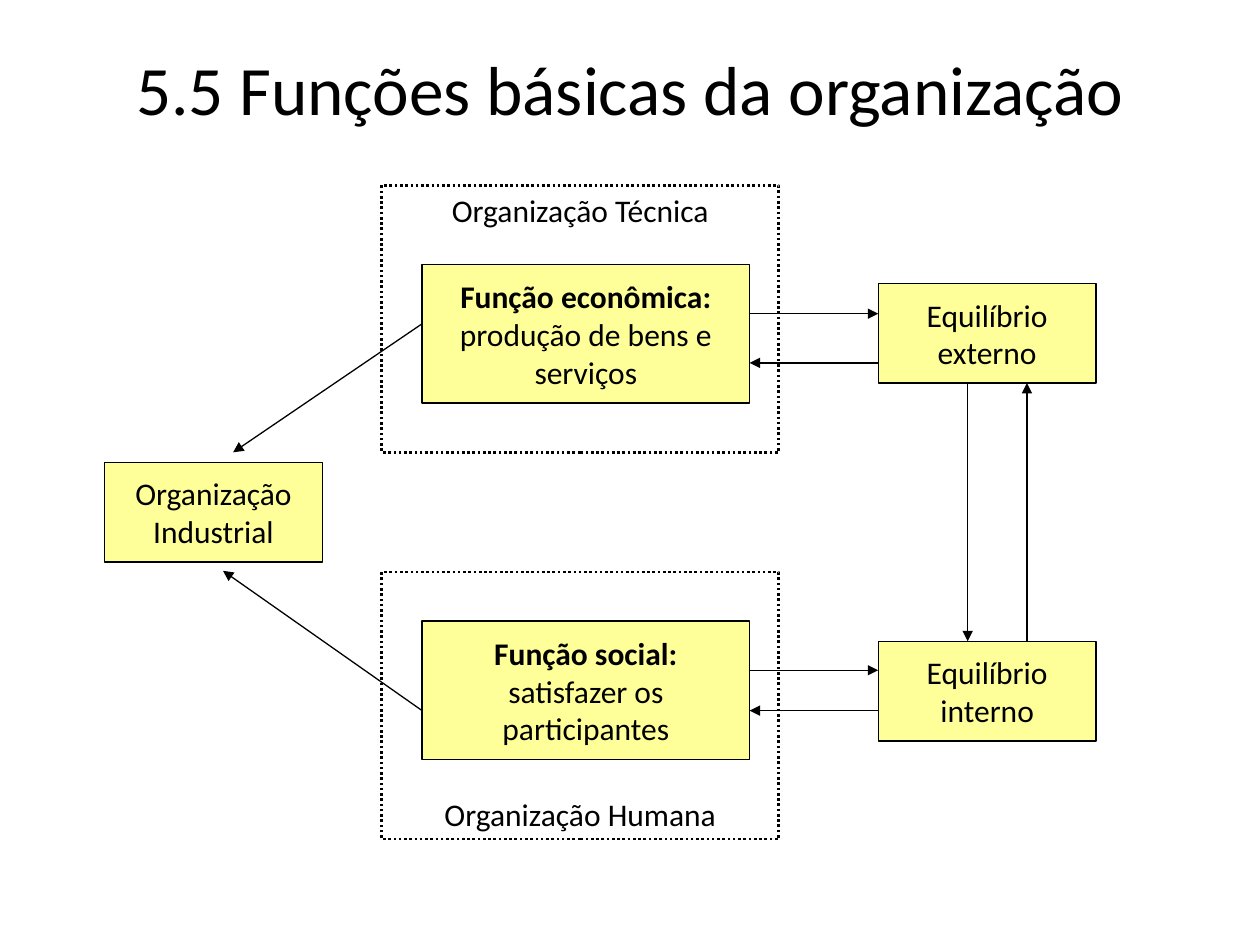
from dataclasses import dataclass

from lxml import etree
from pptx import Presentation
from pptx.dml.color import RGBColor
from pptx.enum.dml import MSO_LINE
from pptx.enum.shapes import MSO_CONNECTOR, MSO_SHAPE
from pptx.enum.text import MSO_ANCHOR, PP_ALIGN
from pptx.oxml.ns import qn
from pptx.util import Inches, Pt

RECTANGLE = MSO_SHAPE.RECTANGLE
STRAIGHT = MSO_CONNECTOR.STRAIGHT
DOTTED = MSO_LINE.ROUND_DOT
TOP, MIDDLE, BOTTOM = MSO_ANCHOR.TOP, MSO_ANCHOR.MIDDLE, MSO_ANCHOR.BOTTOM
CENTER = PP_ALIGN.CENTER


@dataclass(frozen=True)
class Theme:
    font: str = "Calibri"
    ink: RGBColor = RGBColor(0x00, 0x00, 0x00)
    box_fill: RGBColor = RGBColor(0xFF, 0xFF, 0x99)
    title_size: float = 39.6
    body_size: float = 18
    thin_line: float = 0.75
    frame_line: float = 1.5


@dataclass(frozen=True)
class Box:
    left: float
    top: float
    width: float
    height: float
    text: str
    heading: str = ""


@dataclass(frozen=True)
class Frame:
    top: float
    label: str
    anchor: MSO_ANCHOR


@dataclass(frozen=True)
class Arrow:
    start: tuple[float, float]
    end: tuple[float, float]


THEME = Theme()

FUNCTION_LEFT, FUNCTION_WIDTH, FUNCTION_HEIGHT = 3.35, 2.6, 1.1
BALANCE_LEFT = 6.97
SMALL_WIDTH, SMALL_HEIGHT = 1.73, 0.79
FRAME_LEFT, FRAME_WIDTH, FRAME_HEIGHT = 3.03, 3.15, 2.12
EXTERNAL_TOP, INTERNAL_TOP = 2.25, 5.09
FUNCTION_RIGHT = FUNCTION_LEFT + FUNCTION_WIDTH
EXTERNAL_BOTTOM = EXTERNAL_TOP + SMALL_HEIGHT

BOXES = [
    Box(0.83, 3.67, SMALL_WIDTH, SMALL_HEIGHT, "Organização Industrial"),
    Box(FUNCTION_LEFT, 2.1, FUNCTION_WIDTH, FUNCTION_HEIGHT,
        "produção de bens e serviços", "Função econômica: "),
    Box(FUNCTION_LEFT, 4.93, FUNCTION_WIDTH, FUNCTION_HEIGHT,
        "satisfazer os participantes", "Função social: "),
    Box(BALANCE_LEFT, EXTERNAL_TOP, SMALL_WIDTH, SMALL_HEIGHT, "Equilíbrio externo"),
    Box(BALANCE_LEFT, INTERNAL_TOP, SMALL_WIDTH, SMALL_HEIGHT, "Equilíbrio interno"),
]

ARROWS = [
    Arrow((FUNCTION_LEFT, 2.57), (1.85, 3.59)),
    Arrow((FUNCTION_LEFT, 5.64), (1.77, 4.53)),
    Arrow((FUNCTION_RIGHT, 2.49), (BALANCE_LEFT, 2.49)),
    Arrow((BALANCE_LEFT, 2.88), (FUNCTION_RIGHT, 2.88)),
    Arrow((FUNCTION_RIGHT, 5.32), (BALANCE_LEFT, 5.32)),
    Arrow((BALANCE_LEFT, 5.64), (FUNCTION_RIGHT, 5.64)),
    Arrow((7.68, EXTERNAL_BOTTOM), (7.68, INTERNAL_TOP)),
    Arrow((8.15, INTERNAL_TOP), (8.15, EXTERNAL_BOTTOM)),
]

FRAMES = [
    Frame(1.47, "Organização Técnica", TOP),
    Frame(4.54, "Organização Humana", BOTTOM),
]


def write_text(shape, text: str, size: float, anchor: MSO_ANCHOR,
               heading: str = "", wrap: bool = True) -> None:
    """Write one centred paragraph, opened by an optional bold heading."""
    text_frame = shape.text_frame
    text_frame.word_wrap = wrap
    text_frame.vertical_anchor = anchor
    para = text_frame.paragraphs[0]
    para.alignment = CENTER
    para.font.name = THEME.font
    para.font.size = Pt(size)
    para.font.color.rgb = THEME.ink
    if heading:
        span = para.add_run()
        span.text = heading
        span.font.bold = True
    para.add_run().text = text


def add_rectangle(page, left: float, top: float, width: float, height: float,
                  line_width: float):
    shape = page.shapes.add_shape(
        RECTANGLE, Inches(left), Inches(top), Inches(width), Inches(height))
    shape.shadow.inherit = False
    shape.line.color.rgb = THEME.ink
    shape.line.width = Pt(line_width)
    return shape


def add_title(page, text: str) -> None:
    title = page.shapes.add_textbox(Inches(0.5), Inches(0.3), Inches(9), Inches(0.8))
    write_text(title, text, THEME.title_size, MIDDLE)


def add_box(page, box: Box) -> None:
    shape = add_rectangle(page, box.left, box.top, box.width, box.height,
                          THEME.thin_line)
    shape.fill.solid()
    shape.fill.fore_color.rgb = THEME.box_fill
    write_text(shape, box.text, THEME.body_size, MIDDLE, box.heading)


def add_frame(page, frame: Frame) -> None:
    shape = add_rectangle(page, FRAME_LEFT, frame.top, FRAME_WIDTH, FRAME_HEIGHT,
                          THEME.frame_line)
    shape.fill.background()
    shape.line.dash_style = DOTTED
    write_text(shape, frame.label, THEME.body_size, frame.anchor, wrap=False)


def add_arrow(page, arrow: Arrow) -> None:
    connector = page.shapes.add_connector(
        STRAIGHT, *(Inches(value) for value in arrow.start + arrow.end))
    connector.line.color.rgb = THEME.ink
    connector.line.width = Pt(THEME.thin_line)
    properties = connector.element.spPr
    etree.SubElement(properties.find(qn("a:ln")), qn("a:tailEnd"), type="triangle")
    etree.SubElement(properties, qn("a:effectLst"))


def main() -> None:
    deck = Presentation()
    deck.slide_width, deck.slide_height = Inches(10), Inches(7.5)
    page = deck.slides.add_slide(deck.slide_layouts[6])
    add_title(page, "5.5 Funções básicas da organização")
    for box in BOXES:
        add_box(page, box)
    for arrow in ARROWS:
        add_arrow(page, arrow)
    for frame in FRAMES:
        add_frame(page, frame)
    deck.save("out.pptx")


if __name__ == "__main__":
    main()
